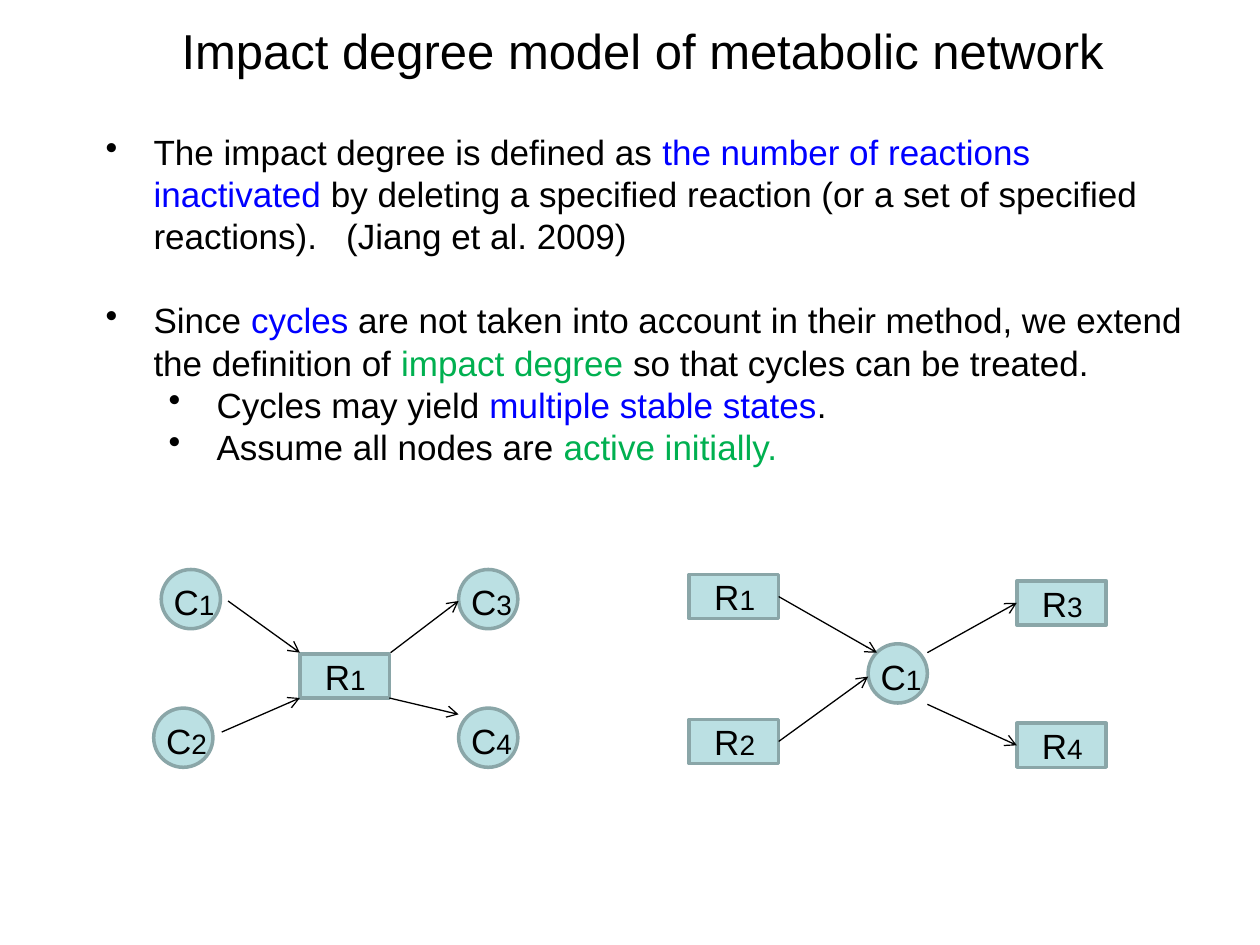
"""Build a slide on the impact degree model of metabolic networks."""
from dataclasses import dataclass

from lxml import etree
from pptx import Presentation, util as u
from pptx.dml.color import RGBColor
from pptx.enum import shapes, text
from pptx.oxml.ns import qn


@dataclass(frozen=True)
class Theme:
    font: str = "Arial"
    ink: str = "000000"
    blue: str = "0000FF"
    green: str = "00B050"
    fill: str = "BBE0E3"
    edge: str = "8AA6A8"
    title: int = 28
    body: int = 20
    index: int = 16
    leading: int = 24


THEME = Theme()
WIDTH, HEIGHT = 10, 7.5
TITLE = "Impact degree model of metabolic network"
TITLE_FRAME = (0.47, 0.16, 9.26, 0.48)
BODY_FRAME = (0.74, 0.99, 8.91, 3.13)
INDENT, LEVEL_STEP = 0.38, 0.5

BULLETS = [
    (0, 0, [("The impact degree is defined as ", THEME.ink),
            ("the number of reactions inactivated ", THEME.blue),
            ("by deleting a specified reaction (or a set of specified "
             "reactions).   (Jiang et al. 2009)", THEME.ink)]),
    (0, 1, [("Since ", THEME.ink), ("cycles ", THEME.blue),
            ("are not taken into account in their method, we extend "
             "the definition of ", THEME.ink),
            ("impact degree ", THEME.green),
            ("so that cycles can be treated.", THEME.ink)]),
    (1, 0, [("Cycles may yield ", THEME.ink),
            ("multiple stable states", THEME.blue), (".", THEME.ink)]),
    (1, 0, [("Assume all nodes are ", THEME.ink),
            ("active initially.", THEME.green)]),
]

KINDS = {
    "C": (shapes.MSO_SHAPE.OVAL, (0.47, 0.47), (0, 0.04)),
    "R": (shapes.MSO_SHAPE.RECTANGLE, (0.71, 0.35), (0.1, -0.04)),
}
LABEL_SIZE = (0.53, 0.44)
LEFT_SIDE, RIGHT_SIDE = 1, 3

NETWORKS = [
    {"nodes": {"C1": (1.28, 4.52), "C2": (1.22, 5.62), "R1": (2.38, 5.19),
               "C3": (3.64, 4.52), "C4": (3.64, 5.62)},
     "links": [((1.81, 4.77), (2.38, 5.18)), ((1.76, 5.81), (2.38, 5.54)),
               ((3.1, 5.18), (3.64, 4.77)), ((3.09, 5.54), (3.64, 5.67))]},
    {"nodes": {"R1": (5.47, 4.56), "R2": (5.47, 5.71), "C1": (6.89, 5.11),
               "R3": (8.07, 4.61), "R4": (8.07, 5.74)},
     "links": [("R1", (6.96, 5.18)), ("R2", (6.89, 5.37)),
               ((7.36, 5.18), "R3"), ((7.36, 5.59), "R4")]},
]


def inches(values):
    return [u.Inches(value) for value in values]


def style(font, size, color=THEME.ink):
    font.name, font.size = THEME.font, u.Pt(size)
    font.color.rgb = RGBColor.from_string(color)


def add_title(page):
    title = page.shapes.title
    title.left, title.top, title.width, title.height = inches(TITLE_FRAME)
    title.text_frame.text = TITLE
    title.text_frame.vertical_anchor = text.MSO_ANCHOR.MIDDLE
    para = title.text_frame.paragraphs[0]
    para.alignment = text.PP_ALIGN.CENTER
    style(para.font, THEME.title)


def add_bullets(page):
    frame = page.shapes.add_textbox(*inches(BODY_FRAME)).text_frame
    frame.word_wrap = True
    for number, (level, gap_lines, spans) in enumerate(BULLETS):
        para = frame.add_paragraph() if number else frame.paragraphs[0]
        para.level = level
        para.line_spacing = u.Pt(THEME.leading)
        para.space_before = u.Pt(gap_lines * THEME.leading)
        style(para.font, THEME.body)
        properties = para._p.get_or_add_pPr()
        properties.set("marL", str(u.Inches(INDENT + level * LEVEL_STEP)))
        properties.set("indent", str(u.Inches(-INDENT)))
        bullet = etree.Element(qn("a:buChar"), char="•")
        properties.find(qn("a:defRPr")).addprevious(bullet)
        for words, color in spans:
            span = para.add_run()
            span.text = words
            style(span.font, THEME.body, color)


def add_node(page, name, left, top):
    preset, size, (shift_x, shift_y) = KINDS[name[0]]
    node = page.shapes.add_shape(preset, *inches((left, top, *size)))
    node.shadow.inherit = False
    node.fill.solid()
    node.fill.fore_color.rgb = RGBColor.from_string(THEME.fill)
    node.line.color.rgb = RGBColor.from_string(THEME.edge)
    node.line.width = u.Pt(2)
    label = page.shapes.add_textbox(
        *inches((left + shift_x, top + shift_y, *LABEL_SIZE)))
    label.text_frame.word_wrap = False
    para = label.text_frame.paragraphs[0]
    for words, size in zip(name, (THEME.body, THEME.index)):
        span = para.add_run()
        span.text = words
        style(span.font, size)
    return node


def add_link(page, nodes, start, end):
    points = [(0, 0) if isinstance(point, str) else point
              for point in (start, end)]
    link = page.shapes.add_connector(
        shapes.MSO_CONNECTOR.STRAIGHT, *inches(points[0] + points[1]))
    if start in nodes:
        link.begin_connect(nodes[start], RIGHT_SIDE)
    if end in nodes:
        link.end_connect(nodes[end], LEFT_SIDE)
    link.line.color.rgb = RGBColor.from_string(THEME.ink)
    link.line.width = u.Pt(0.75)
    etree.SubElement(link.line._get_or_add_ln(), qn("a:tailEnd"), type="arrow")
    etree.SubElement(link._element.spPr, qn("a:effectLst"))


def main():
    deck = Presentation()
    deck.slide_width, deck.slide_height = inches((WIDTH, HEIGHT))
    page = deck.slides.add_slide(deck.slide_layouts.get_by_name("Title Only"))
    add_title(page)
    add_bullets(page)
    for network in NETWORKS:
        nodes = {name: add_node(page, name, *place)
                 for name, place in network["nodes"].items()}
        for start, end in network["links"]:
            add_link(page, nodes, start, end)
    deck.save("out.pptx")


if __name__ == "__main__":
    main()
